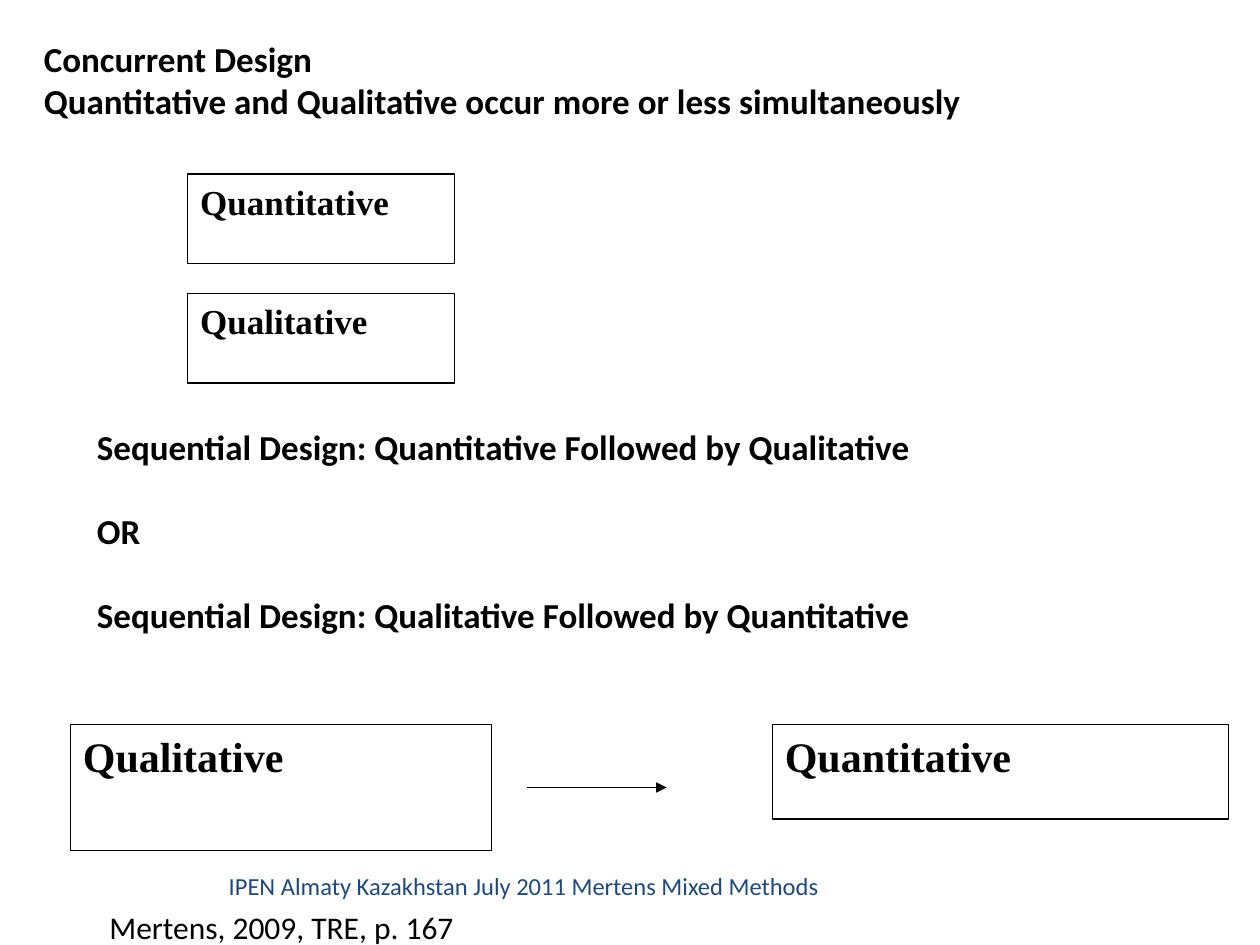
from dataclasses import dataclass

from lxml import etree
from pptx import Presentation
from pptx.dml.color import RGBColor
from pptx.enum.shapes import MSO_CONNECTOR, MSO_SHAPE
from pptx.enum.text import MSO_ANCHOR, PP_ALIGN
from pptx.oxml.ns import qn
from pptx.util import Inches, Pt

RECTANGLE = MSO_SHAPE.RECTANGLE
STRAIGHT = MSO_CONNECTOR.STRAIGHT
TOP, MIDDLE = MSO_ANCHOR.TOP, MSO_ANCHOR.MIDDLE
LEFT, RIGHT = PP_ALIGN.LEFT, PP_ALIGN.RIGHT


@dataclass(frozen=True)
class Theme:
    ink: RGBColor = RGBColor(0x00, 0x00, 0x00)
    paper: RGBColor = RGBColor(0xFF, 0xFF, 0xFF)
    footer: RGBColor = RGBColor(0x1F, 0x49, 0x7D)
    body_font: str = "Calibri"
    box_font: str = "Times New Roman"
    heading: Pt = Pt(20)
    small_box: Pt = Pt(20)
    large_box: Pt = Pt(24)
    citation: Pt = Pt(18)
    footer_size: Pt = Pt(14)
    outline: Pt = Pt(0.75)


THEME = Theme()


def write(frame, text, size, font=THEME.body_font, color=THEME.ink, bold=False,
          align=LEFT, anchor=TOP, gap=Pt(0)):
    """Fill a text frame, with a gap between its paragraphs."""
    frame.word_wrap = True
    frame.vertical_anchor = anchor
    frame.text = text
    for index, paragraph in enumerate(frame.paragraphs):
        paragraph.alignment = align
        if index:
            paragraph.space_before = gap
        for run in paragraph.runs:
            run.font.name = font
            run.font.size = size
            run.font.bold = bold
            run.font.color.rgb = color


def add_text(slide, left, top, width, height, text, size, **style):
    box = slide.shapes.add_textbox(Inches(left), Inches(top), Inches(width), Inches(height))
    write(box.text_frame, text, size, **style)


def add_method(group, left, top, width, height, method, size):
    """Outlined box that names one method."""
    box = group.shapes.add_shape(RECTANGLE, Inches(left), Inches(top),
                                 Inches(width), Inches(height))
    box.shadow.inherit = False
    box.fill.solid()
    box.fill.fore_color.rgb = THEME.paper
    box.line.color.rgb = THEME.ink
    box.line.width = THEME.outline
    write(box.text_frame, method, size, font=THEME.box_font, bold=True)


def add_arrow(group, left, right, y):
    arrow = group.shapes.add_connector(STRAIGHT, Inches(left), Inches(y),
                                       Inches(right), Inches(y))
    arrow.line.color.rgb = THEME.ink
    arrow.line.width = THEME.outline
    etree.SubElement(arrow.line._get_or_add_ln(), qn("a:tailEnd"), type="triangle")
    etree.SubElement(arrow._element.spPr, qn("a:effectLst"))


def concurrent_design(slide, left, top):
    """Heading above two stacked methods."""
    add_text(slide, left, top, 9.33, 1.73,
             "Concurrent Design\nQuantitative and Qualitative occur more or less simultaneously",
             THEME.heading, bold=True)
    stack = slide.shapes.add_group_shape()
    for row, method in enumerate(("Quantitative", "Qualitative")):
        add_method(stack, left + 1.24, top + 1.13 + row * 0.95, 2.12, 0.71,
                   method, THEME.small_box)


def sequential_design(slide, left, top):
    """Headings for both orders above a flow from one method to the next."""
    add_text(slide, left + 0.11, top, 7.58, 2.27,
             "Sequential Design: Quantitative Followed by Qualitative\nOR\n"
             "Sequential Design: Qualitative Followed by Quantitative",
             THEME.heading, bold=True, gap=Pt(24))
    flow = slide.shapes.add_group_shape()
    flow_top = top + 2.42
    add_method(flow, left, flow_top, 3.34, 1, "Qualitative", THEME.large_box)
    add_arrow(flow, left + 3.62, left + 4.73, flow_top + 0.5)
    add_method(flow, left + 5.57, flow_top, 3.62, 0.75, "Quantitative", THEME.large_box)


def footer(slide, left, top):
    """Event line with the citation under it."""
    add_text(slide, left, top, 5.93, 0.4,
             "IPEN Almaty Kazakhstan July 2011 Mertens Mixed Methods",
             THEME.footer_size, color=THEME.footer, align=RIGHT, anchor=MIDDLE)
    add_text(slide, left + 0.1, top + 0.33, 4.14, 0.4,
             "Mertens, 2009, TRE, p. 167", THEME.citation)


def main():
    deck = Presentation()
    deck.slide_width, deck.slide_height = Inches(10), Inches(7.5)
    slide = deck.slides.add_slide(deck.slide_layouts[6])
    concurrent_design(slide, 0.25, 0.25)
    sequential_design(slide, 0.56, 3.33)
    footer(slide, 0.67, 6.83)
    deck.save("out.pptx")


if __name__ == "__main__":
    main()
